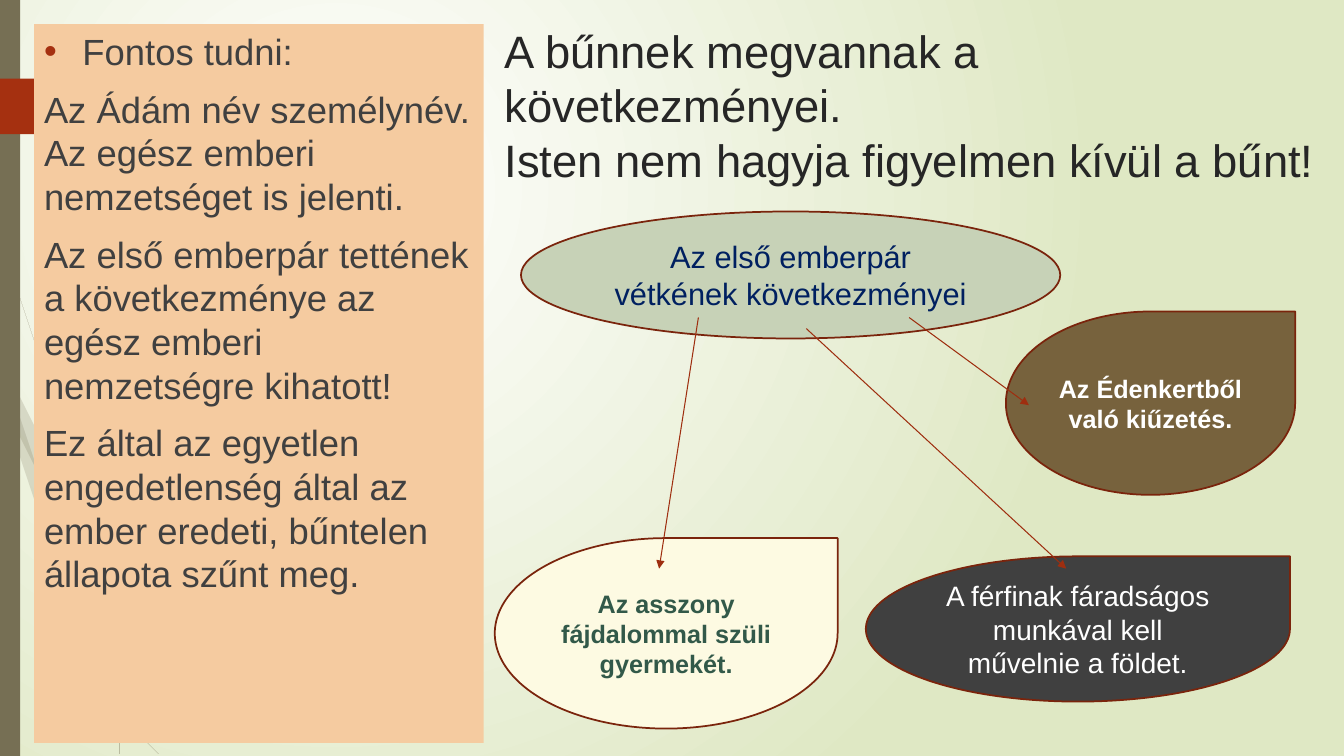
from pptx import Presentation
from pptx.dml.color import RGBColor
from pptx.enum.shapes import MSO_CONNECTOR, MSO_SHAPE
from pptx.enum.text import MSO_ANCHOR, PP_ALIGN
from pptx.oxml.ns import qn
from pptx.util import Cm, Pt
from lxml import etree

RECT, ELLIPSE = MSO_SHAPE.RECTANGLE, MSO_SHAPE.OVAL
TEARDROP, TAB = MSO_SHAPE.TEAR, MSO_SHAPE.PENTAGON
STRAIGHT = MSO_CONNECTOR.STRAIGHT
TOP, MIDDLE = MSO_ANCHOR.TOP, MSO_ANCHOR.MIDDLE
LEFT, CENTER = PP_ALIGN.LEFT, PP_ALIGN.CENTER

COLORS = {
    "white": "FFFFFF", "pale_green": "DFE8C4", "olive": "766F54", "rust": "A53010",
    "peach": "F5CBA0", "title": "262626", "charcoal": "404040", "sage": "C7D2B7",
    "navy": "002060", "brown": "77623D", "cream": "FDFAE2", "forest": "325949",
    "outline": "7A240C", "arrow": "9E2E0F",
}

FAINT_STEMS = [
    [(1.47, 13.26), (2.13, 15.21), (2.16, 14.88), (1.57, 13.21), (0.36, 8.76), (0.43, 9.55)],
    [(2.34, 15.42), (2.24, 15.14), (2.24, 15.49), (3.12, 17.63), (3.81, 19.05), (3.94, 19.05),
     (3.23, 17.58)],
    [(3.02, 19.05), (3.15, 19.05), (2.67, 18.06)],
    [(2.36, 17.35), (1.78, 15.72), (0.79, 11.91), (0.43, 9.55), (0.28, 8.89), (0.71, 11.94),
     (1.65, 15.77), (2.34, 17.6), (2.57, 18.14)],
    [(2.57, 18.14), (2.9, 19.05), (3.02, 19.05)],
    [(2.44, 17.58), (2.36, 17.35), (2.51, 17.96), (2.57, 18.14), (3.02, 19.05), (2.67, 18.06)],
]
DARK_STEMS = [
    [(0.18, 2.79), (0.43, 5.92), (0.84, 9.02), (1.42, 12.12), (1.45, 12.22), (1.4, 11.61),
     (0.91, 9.02), (0.48, 5.89), (0.2, 2.77), (0.1, 0), (0.08, 0)],
    [(2.87, 16.48), (2.79, 16.28), (2.82, 16.66), (3.35, 17.98), (3.86, 19.02), (3.99, 19.02),
     (3.45, 17.93)],
    [(3.38, 19.02), (3.45, 19.02), (3.1, 18.26)],
    [(2.97, 18.34), (3.23, 19.02), (3.33, 19.02)],
    [(2.95, 17.93), (2.79, 17.55), (2.95, 18.21), (2.97, 18.34), (3.3, 19.02), (3.38, 19.02),
     (3.1, 18.26)],
]
PANEL_LINES = [
    "Fontos tudni:",
    "Az Ádám név személynév. Az egész emberi nemzetséget is jelenti.",
    "Az első emberpár tettének a következménye az egész emberi nemzetségre kihatott!",
    "Ez által az egyetlen engedetlenség által az ember eredeti, bűntelen állapota szűnt meg.",
]
BUBBLES = [
    (ELLIPSE, (0.66, 0, 13.59, 3.2), "sage", "navy", 22, False,
     "Az első emberpár vétkének következményei"),
    (TEARDROP, (12.88, 2.52, 7.29, 4.62), "brown", "white", 18, True,
     "Az Édenkertből való kiűzetés."),
    (TEARDROP, (0, 8.23, 8.64, 4.8), "cream", "forest", 18, True,
     "Az asszony fájdalommal szüli gyermekét."),
    (TEARDROP, (9.35, 8.69, 10.69, 3.66), "charcoal", "white", 20, False,
     "A férfinak fáradságos munkával kell művelnie a földet."),
]
ARROWS = [(10.44, 2.67, 13.46, 4.88), (5.13, 2.67, 4.14, 9), (7.85, 2.95, 14.4, 9)]


def rgb(name):
    """Return the named colour."""
    return RGBColor.from_string(COLORS[name])


def paint(shape, fill, outline=None):
    """Give a shape a flat fill and an optional outline."""
    shape.shadow.inherit = False
    shape.fill.solid()
    shape.fill.fore_color.rgb = rgb(fill)
    if outline:
        shape.line.color.rgb = rgb(outline)
        shape.line.width = Pt(1.25)
    else:
        shape.line.fill.background()


def add_block(slide, kind, box, fill, outline=None):
    """Add a painted preset shape in a box given in centimetres."""
    block = slide.shapes.add_shape(kind, *map(Cm, box))
    paint(block, fill, outline)
    return block


def write(shape, lines, color, size, bold=False, align=LEFT, anchor=TOP, gap=0):
    """Write the lines as paragraphs of one format."""
    frame = shape.text_frame
    for name, value in {"word_wrap": True, "vertical_anchor": anchor}.items():
        setattr(frame, name, value)
    for index, line in enumerate(lines):
        paragraph = frame.paragraphs[0] if index == 0 else frame.add_paragraph()
        paragraph.text = line
        for name, value in {"alignment": align, "space_before": Pt(gap)}.items():
            setattr(paragraph, name, value)
        for run in paragraph.runs:
            for name, value in {"name": "Arial", "size": Pt(size), "bold": bold}.items():
                setattr(run.font, name, value)
            run.font.color.rgb = rgb(color)


def draw_background(slide):
    """Fill the background with a radial gradient."""
    fill = slide.background.fill
    fill.gradient()
    for stop, color, position in zip(fill.gradient_stops, ("white", "pale_green"), (0, 1)):
        stop.color.rgb = rgb(color)
        stop.position = position
    gradient = slide.element.find(".//" + qn("a:gradFill"))
    gradient.remove(gradient.find(qn("a:lin")))
    circle = etree.SubElement(gradient, qn("a:path"), path="circle")
    etree.SubElement(circle, qn("a:fillToRect"), l="50000", t="50000", r="100000", b="100000")


def draw_edge(slide, box):
    """Draw the grass stems, the strip and the tab along the left edge."""
    left, top, width, height = box
    for stems, alpha in ((FAINT_STEMS, "20000"), (DARK_STEMS, "100000")):
        for points in stems:
            (start_x, start_y), *rest = points
            builder = slide.shapes.build_freeform(start_x, start_y, scale=Cm(1))
            builder.add_line_segments(rest, close=True)
            stem = builder.convert_to_shape(Cm(left), Cm(top))
            paint(stem, "olive")
            color = stem.element.spPr.find(qn("a:solidFill"))[0]
            etree.SubElement(color, qn("a:alpha"), val=alpha)
    add_block(slide, RECT, (left, top, width, height), "olive")
    add_block(slide, TAB, (left, top + 1.98, 4.42, 1.4), "rust")


def draw_title(slide, box):
    """Place the title."""
    title = slide.shapes.add_textbox(*map(Cm, box))
    write(title, ["A bűnnek megvannak a következményei.\nIsten nem hagyja figyelmen kívül a bűnt!"],
          "title", 32.4)


def draw_panel(slide, box):
    """Place the panel of notes with its bulleted heading."""
    panel = add_block(slide, RECT, box, "peach")
    write(panel, PANEL_LINES, "charcoal", 26, gap=10)
    heading = panel.text_frame.paragraphs[0]._p.get_or_add_pPr()
    for name, value in {"marL": Cm(0.97), "indent": -Cm(0.97)}.items():
        heading.set(name, str(value))
    bullet_color = etree.SubElement(heading, qn("a:buClr"))
    etree.SubElement(bullet_color, qn("a:srgbClr"), val=COLORS["rust"])
    etree.SubElement(heading, qn("a:buFont"), typeface="Arial")
    etree.SubElement(heading, qn("a:buChar"), char="•")


def draw_consequences(slide, left, top):
    """Draw the bubbles and the arrows from cause to consequences."""
    for kind, (x, y, width, height), fill, ink, size, bold, text in BUBBLES:
        bubble = add_block(slide, kind, (left + x, top + y, width, height), fill, "outline")
        write(bubble, [text], ink, size, bold, CENTER, MIDDLE)
    for x1, y1, x2, y2 in ARROWS:
        ends = (left + x1, top + y1, left + x2, top + y2)
        arrow = slide.shapes.add_connector(STRAIGHT, *map(Cm, ends))
        arrow.line.color.rgb = rgb("arrow")
        arrow.line.width = Pt(0.75)
        etree.SubElement(arrow.line._get_or_add_ln(), qn("a:tailEnd"), type="triangle")
        etree.SubElement(arrow.element.spPr, qn("a:effectLst"))


def main():
    """Build the slide and save it."""
    deck = Presentation()
    deck.slide_width, deck.slide_height = Cm(33.87), Cm(19.05)
    slide = deck.slides.add_slide(deck.slide_layouts[6])
    draw_background(slide)
    draw_edge(slide, (0, 0, 0.51, 19.05))
    draw_title(slide, (12.47, 0.46, 21.13, 4.29))
    draw_panel(slide, (0.86, 0.61, 11.33, 18.11))
    draw_consequences(slide, 12.47, 5.33)
    deck.save("out.pptx")


if __name__ == "__main__":
    main()
